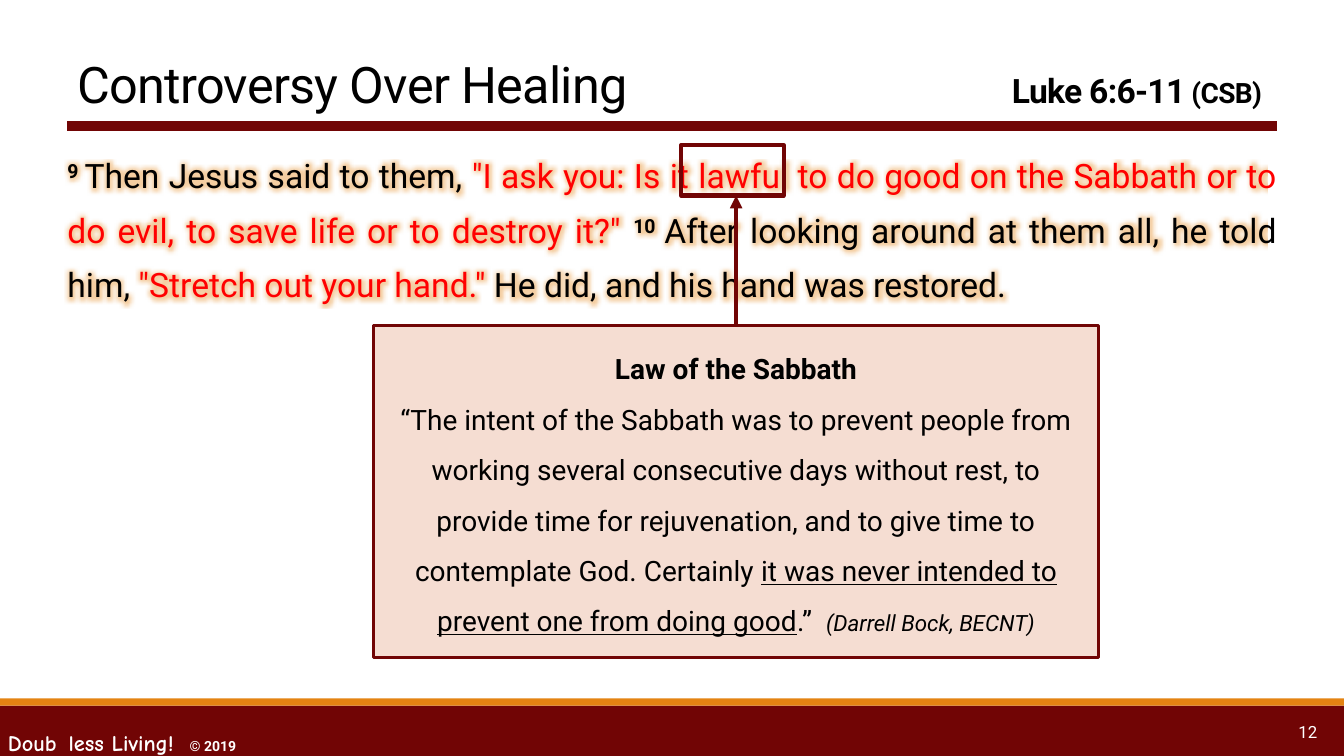
from lxml import etree
from pptx import Presentation
from pptx import util as u
from pptx.dml.color import RGBColor
from pptx.enum import shapes, text
from pptx.oxml.ns import qn

MAROON, ORANGE, PINK = "710505", "E48312", "F5DDD2"
BLACK, WHITE, RED = "000000", "FFFFFF", "FF0000"
ALIGN, ANCHOR = text.PP_ALIGN, text.MSO_ANCHOR

# Each run: its text, then whatever differs from the paragraph's base style
TITLE = [
    ("Controversy Over Healing", {}),
    ("\t ", {"size": 28}),
    ("Luke 6:6-11", {"size": 24, "bold": True}),
    (" (CSB)", {"size": 20, "bold": True}),
]
VERSE_NUMBER = {"bold": True, "raised": True}
PASSAGE = [
    ("9 ", VERSE_NUMBER),
    ("Then Jesus said to them, ", {}),
    ('"I ask you: Is it lawful to do good on the Sabbath or to do evil, '
     'to save life or to destroy it?" ', {"color": RED}),
    ("10 ", VERSE_NUMBER),
    ("After looking around at them all, he told him, ", {}),
    ('"Stretch out your hand."', {"color": RED}),
    (" He did, and his hand was restored. ", {}),
]
SABBATH_LAW = [
    [("Law of the Sabbath", {"bold": True})],
    [("“The intent of the Sabbath was to prevent people from working several "
      "consecutive days without rest, to provide time for rejuvenation, and to "
      "give time to contemplate God. Certainly ", {}),
     ("it was never intended to prevent one from doing good", {"underline": True}),
     (".”  ", {}),
     ("(Darrell Bock, BECNT)", {"size": 16, "italic": True})],
]
HAND_LETTERED = {"font": "Comic Neue", "size": 16}
CREDIT = [
    ("Doub", HAND_LETTERED),
    (" ", {**HAND_LETTERED, "size": 24}),
    ("less Living!  ", HAND_LETTERED),
    ("© 2019", {}),
]
PAGE = [("12", {})]

# Layout in centimetres
SLIDE_W, SLIDE_H = 33.87, 19.05
MARGIN, CONTENT_W = 1.7, 30.48
RULE_Y = 3.18
FOOTER_H, STRIP_H = 1.27, 0.18
FOOTER_Y = SLIDE_H - FOOTER_H
LAW_BOX = (9.42, 8.2, 18.26, 8.36)
LAWFUL_BOX = (17.17, 3.66, 2.58, 1.27)


def rgb(hex_color):
    return RGBColor.from_string(hex_color)


def cm(*lengths):
    return [u.Cm(length) for length in lengths]


def add_glow(run):
    """Give the letters a soft orange halo; it must follow the text fill."""
    effects = etree.Element(qn("a:effectLst"))
    glow = etree.SubElement(effects, qn("a:glow"), rad=str(u.Pt(8)))
    color = etree.SubElement(glow, qn("a:srgbClr"), val=ORANGE)
    etree.SubElement(color, qn("a:alpha"), val="40000")
    run.font._element.find(qn("a:solidFill")).addnext(effects)


def write(paragraph, runs, size, color=BLACK, font="Roboto", bold=False,
          align=ALIGN.LEFT, spacing=None, tracking=None, glow=False):
    paragraph.alignment = align
    if spacing:
        paragraph.line_spacing = spacing
    for words, style in runs:
        run = paragraph.add_run()
        run.text = words
        run.font.name = style.get("font", font)
        run.font.size = u.Pt(style.get("size", size))
        run.font.bold = style.get("bold", bold)
        run.font.italic = style.get("italic", False)
        run.font.underline = style.get("underline", False)
        run.font.color.rgb = rgb(style.get("color", color))
        if style.get("raised"):
            run.font._element.set("baseline", "30000")
        if tracking:
            run.font._element.set("spc", str(tracking))
        if glow:
            add_glow(run)


def set_frame(shape, anchor=ANCHOR.TOP, insets=(0.25, 0.13, 0.25, 0.13)):
    frame = shape.text_frame
    frame.word_wrap = True
    frame.auto_size = text.MSO_AUTO_SIZE.NONE
    frame.vertical_anchor = anchor
    (frame.margin_left, frame.margin_top,
     frame.margin_right, frame.margin_bottom) = cm(*insets)
    return frame


def add_text(slide, box, **frame_options):
    return set_frame(slide.shapes.add_textbox(*cm(*box)), **frame_options)


def add_box(slide, box, fill=None, line=None, width=0):
    shape = slide.shapes.add_shape(shapes.MSO_SHAPE.RECTANGLE, *cm(*box))
    shape.shadow.inherit = False
    if fill:
        shape.fill.solid()
        shape.fill.fore_color.rgb = rgb(fill)
    else:
        shape.fill.background()
    if line:
        shape.line.color.rgb = rgb(line)
        shape.line.width = u.Pt(width)
    else:
        shape.line.fill.background()
    return shape


def add_line(slide, ends, width, arrow=False):
    line = slide.shapes.add_connector(shapes.MSO_CONNECTOR.STRAIGHT, *cm(*ends))
    line.line.color.rgb = rgb(MAROON)
    line.line.width = u.Pt(width)
    if arrow:
        etree.SubElement(line.line._get_or_add_ln(), qn("a:tailEnd"), type="triangle")
    etree.SubElement(line._element.spPr, qn("a:effectLst"))


def add_footer(slide):
    add_box(slide, (0, FOOTER_Y, SLIDE_W, FOOTER_H), fill=MAROON)
    add_box(slide, (0, FOOTER_Y - STRIP_H, SLIDE_W, STRIP_H), fill=ORANGE)
    credit = add_text(slide, (-0.05, 17.96, 9.96, 1.27))
    write(credit.paragraphs[0], CREDIT, 10, WHITE, bold=True)
    page = add_text(slide, (30.02, 17.93, 3.43, 1.02), anchor=ANCHOR.MIDDLE)
    write(page.paragraphs[0], PAGE, 12, WHITE, align=ALIGN.RIGHT)


def add_title(slide):
    title = slide.shapes.title
    title.left, title.top, title.width, title.height = cm(MARGIN, 0, CONTENT_W, 3)
    heading = set_frame(title, anchor=ANCHOR.BOTTOM).paragraphs[0]
    heading.line_spacing = 0.85
    tabs = etree.SubElement(heading._p.get_or_add_pPr(), qn("a:tabLst"))
    etree.SubElement(tabs, qn("a:tab"), pos=str(u.Cm(29.85)), algn="r")
    write(heading, TITLE, 36, tracking=-50)


def add_passage(slide):
    passage = add_text(slide, (MARGIN, 3.43, CONTENT_W, 13.59),
                       insets=(0, 0.13, 0, 0.13)).paragraphs[0]
    passage.space_after = u.Pt(6)
    write(passage, PASSAGE, 24, align=ALIGN.JUSTIFY, spacing=1.35, glow=True)


def add_sabbath_law(slide):
    box = add_box(slide, LAW_BOX, PINK, MAROON, 2.25)
    frame = set_frame(box, ANCHOR.MIDDLE, (0.25, 0, 0.25, 0.25))
    for number, runs in enumerate(SABBATH_LAW):
        paragraph = frame.add_paragraph() if number else frame.paragraphs[0]
        write(paragraph, runs, 20, align=ALIGN.CENTER, spacing=1.5)
    left, top, width, _ = LAW_BOX
    middle = left + width / 2
    add_line(slide, (middle, top, middle, LAWFUL_BOX[1] + LAWFUL_BOX[3]), 3, arrow=True)
    add_box(slide, LAWFUL_BOX, line=MAROON, width=3)


def main():
    deck = Presentation()
    deck.slide_width, deck.slide_height = cm(SLIDE_W, SLIDE_H)
    slide = deck.slides.add_slide(deck.slide_layouts[5])
    add_footer(slide)
    add_line(slide, (MARGIN, RULE_Y, MARGIN + CONTENT_W, RULE_Y), 7.5)
    add_title(slide)
    add_passage(slide)
    add_sabbath_law(slide)
    deck.save("out.pptx")


if __name__ == "__main__":
    main()
